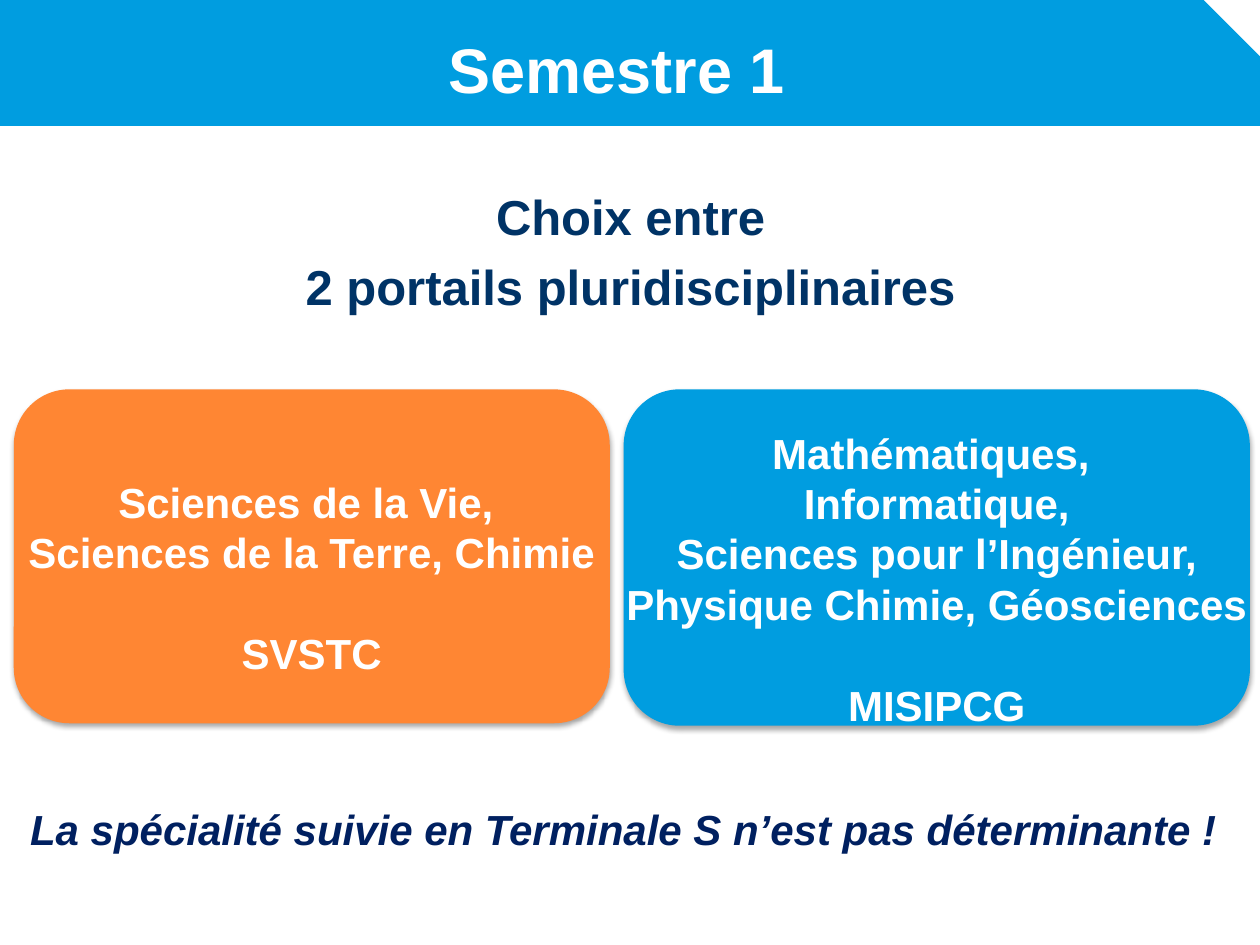
import dataclasses

import lxml.etree
import pptx
import pptx.dml.color
import pptx.enum.shapes
import pptx.enum.text
import pptx.oxml
import pptx.oxml.ns
import pptx.util

Inch = pptx.util.Inches
Kind = pptx.enum.shapes.MSO_SHAPE
Align = pptx.enum.text.PP_ALIGN
Anchor = pptx.enum.text.MSO_ANCHOR

WIDE, HIGH = 10, 7.5
BLUE, ORANGE, NAVY, INK, WHITE = "009DE0", "FF8633", "003366", "002060", "FFFFFF"


@dataclasses.dataclass(frozen=True)
class Area:
    left: float
    top: float
    width: float
    height: float

    def spans(self) -> list:
        return [Inch(v) for v in (self.left, self.top, self.width, self.height)]


@dataclasses.dataclass(frozen=True)
class Portal:
    area: Area
    fill: str
    fields: tuple
    code: str


def paint(color, code: str) -> None:
    color.rgb = pptx.dml.color.RGBColor.from_string(code)


def write(shape, lines, *, size=24, color=WHITE, italic=False, align=Align.CENTER,
          anchor=Anchor.TOP, wrap=True, left=0.1, top=0.05, gap=0, pitch=None):
    """Fill a shape with bold paragraphs; gap and pitch are in points."""
    frame = shape.text_frame
    frame.word_wrap = wrap
    frame.auto_size = pptx.enum.text.MSO_AUTO_SIZE.NONE
    frame.vertical_anchor = anchor
    frame.margin_left, frame.margin_right = Inch(left), Inch(0.1)
    frame.margin_top, frame.margin_bottom = Inch(top), Inch(0.05)
    for at, line in enumerate(lines):
        para = frame.add_paragraph() if at else frame.paragraphs[0]
        para.text = line
        para.alignment = align
        para.space_before = pptx.util.Pt(gap if at else 0)
        if pitch:
            para.line_spacing = pptx.util.Pt(pitch)
        for run in para.runs:
            font = run.font
            font.name, font.size = "Arial", pptx.util.Pt(size)
            font.bold, font.italic = True, italic
            paint(font.color, color)
    return frame


def block(slide, kind, area: Area, fill: str):
    shape = slide.shapes.add_shape(kind, *area.spans())
    shape.shadow.inherit = False
    shape.fill.solid()
    paint(shape.fill.fore_color, fill)
    shape.line.fill.background()
    return shape


def shade(shape) -> None:
    """Put a soft shadow straight below the shape."""
    space = pptx.oxml.ns.nsdecls("a")
    soft = pptx.oxml.parse_xml(
        f'<a:outerShdw {space} blurRad="{pptx.util.Pt(3.1)}" dist="{pptx.util.Pt(1.8)}" '
        'dir="5400000" rotWithShape="0"><a:srgbClr val="000000">'
        '<a:alpha val="35000"/></a:srgbClr></a:outerShdw>')
    shape.element.spPr.find(pptx.oxml.ns.qn("a:effectLst")).append(soft)


def draw(slide, portal: Portal) -> None:
    shape = block(slide, Kind.ROUNDED_RECTANGLE, portal.area, portal.fill)
    shade(shape)
    pitch = 28.8
    frame = write(shape, [*portal.fields, portal.code], anchor=Anchor.MIDDLE,
                  wrap=False, top=0.38, pitch=pitch)
    frame.paragraphs[-1].space_before = pptx.util.Pt(pitch)


def note(slide, area: Area, lines, **style) -> None:
    write(slide.shapes.add_textbox(*area.spans()), lines, **style)


def main() -> None:
    deck = pptx.Presentation()
    deck.slide_width, deck.slide_height = Inch(WIDE), Inch(HIGH)
    slide = deck.slides.add_slide(deck.slide_layouts[5])

    title = slide.shapes.title
    title.left, title.top, title.width, title.height = Area(0, 0, 0.95 * WIDE, 1).spans()
    write(title, ["Semestre 1"], size=36, anchor=Anchor.MIDDLE, left=0.39, top=0.13)
    band = block(slide, Kind.SNIP_1_RECTANGLE, Area(0, 0, WIDE + 0.01, 1), BLUE)
    band.adjustments[0] = 0.458
    title.element.addprevious(band.element)

    note(slide, Area(2.04, 1.39, 5.93, 1.14),
         ["Choix entre", "2 portails pluridisciplinaires"],
         size=28, color=NAVY, top=0.09, gap=6.4)

    row = 3.09
    portals = (
        Portal(Area(4.95, row, 4.97, 2.67), BLUE,
               ("Mathématiques, ", "Informatique,", "Sciences pour l’Ingénieur,",
                "Physique Chimie, Géosciences"), "MISIPCG"),
        Portal(Area(0.11, row, 4.73, 2.65), ORANGE,
               ("Sciences de la Vie, \vSciences de la Terre, Chimie",), "SVSTC"),
    )
    for portal in portals:
        draw(slide, portal)

    note(slide, Area(0.14, 6.33, 9.78, 0.5),
         ["La spécialité suivie en Terminale S n’est pas déterminante !"],
         color=INK, italic=True, align=Align.LEFT)
    deck.save("out.pptx")


if __name__ == "__main__":
    main()
